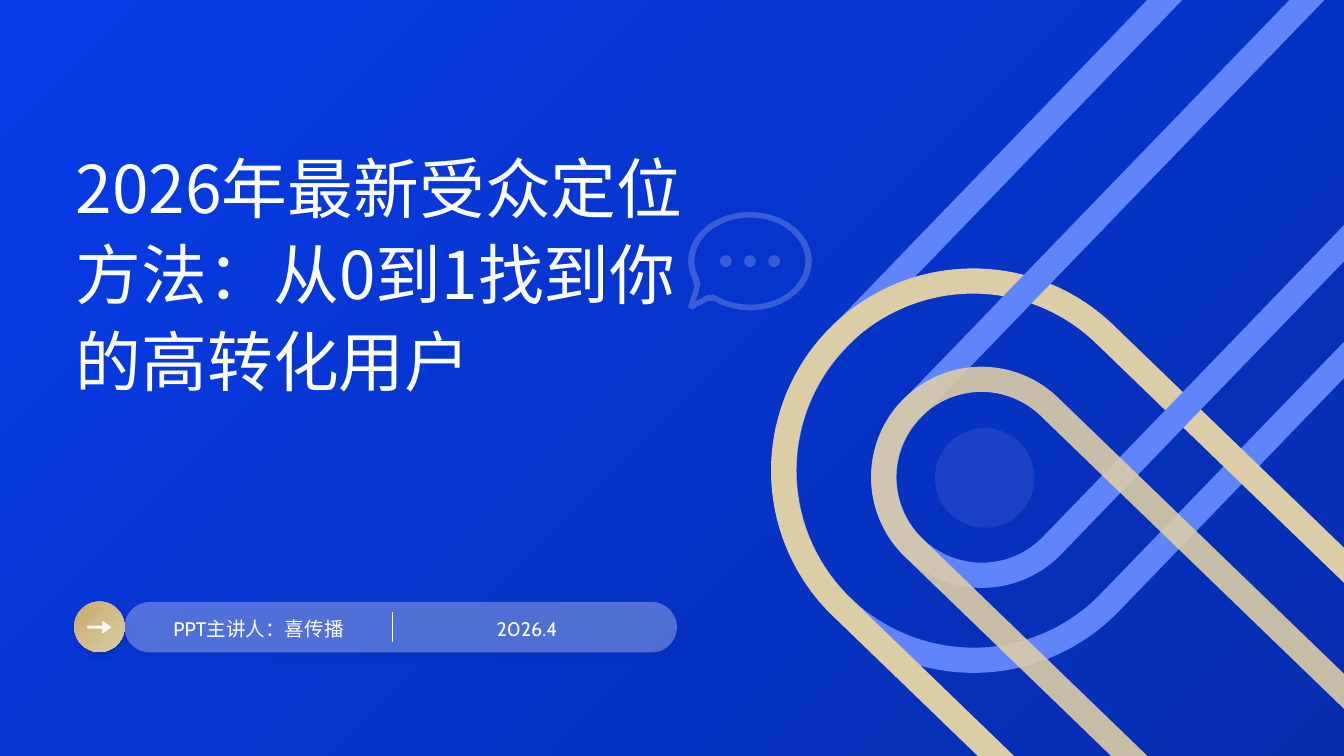
"""Build the cover slide about audience targeting."""
from dataclasses import dataclass
from math import cos, radians, sin
from typing import Optional

from lxml import etree
from pptx import Presentation
from pptx.dml.color import RGBColor as RGB
from pptx.enum.shapes import MSO_CONNECTOR as CONN, MSO_SHAPE as SHAPE
from pptx.enum.text import MSO_ANCHOR as ANCHOR, PP_ALIGN as ALIGN
from pptx.oxml.ns import qn
from pptx.util import Cm, Pt

COLORS = {
    "bg_start": "063CE8", "bg_end": "052DAE", "blue": "6085FB",
    "gold": "DDCDA6", "dark_gold": "C6AB6A", "pale": "CAD6FE",
    "shadow": "031E74", "white": "FFFFFF",
}
CJK_FONT = "Noto Sans CJK SC"
WIDTH, HEIGHT = 33.87, 19.05
Box = tuple[float, float, float, float]
Points = list[tuple[float, float]]


@dataclass
class Band:
    box: Box
    rotation: int
    color: str
    alpha: int = 100


@dataclass
class Item:
    kind: SHAPE
    box: Box
    colors: tuple[str, ...]
    alpha: int = 100
    adjust: tuple[float, ...] = ()
    shadow: bool = False


@dataclass
class Label:
    text: str
    box: Box
    size: int
    font: str
    align: Optional[ALIGN] = None


BANDS = [
    Band((24.87, -5.56, 9.55, 24.26), 224, "blue"),
    Band((23.45, 5.51, 9.55, 19.84), 314, "gold"),
    Band((26.77, -1.55, 4.93, 17.86), 224, "blue"),
    Band((25.75, 8.08, 4.93, 14.61), 314, "gold", 90),
]
BACKGROUND = Item(SHAPE.RECTANGLE, (0, 0, WIDTH, HEIGHT), ("bg_start", "bg_end"))
ITEMS = [
    Item(SHAPE.OVAL, (23.56, 10.79, 2.51, 2.51), ("pale",), 10),
    Item(SHAPE.OVAL, (1.87, 15.16, 1.27, 1.27), ("dark_gold", "gold"), shadow=True),
    Item(SHAPE.RIGHT_ARROW, (2.2, 15.64, 0.61, 0.33), ("white",),
         adjust=(0.24, 0.7)),
    Item(SHAPE.ROUNDED_RECTANGLE, (3.14, 15.17, 13.92, 1.27), ("white",), 30,
         (0.5,), True),
]
SPEAKER = [
    Label("PPT主讲人：喜传播", (3.89, 15.38, 5.26, 0.86), 14, "Cabin", ALIGN.CENTER),
    Label("2026.4", (10.65, 15.38, 5.26, 0.86), 14, "Cabin", ALIGN.CENTER),
]
TITLE = Label("2026年最新受众定位方法：从0到1找到你的高转化用户",
              (1.91, 3.06, 16.36, 7.47), 47, CJK_FONT)

BUBBLE_CENTER = (18.9, 6.58)
OUTER_TAIL = [(18.03, 7.59), (17.83, 7.59), (17.58, 7.72), (17.45, 7.8),
              (17.35, 7.75), (17.35, 7.67), (17.45, 7.39), (17.5, 7.21)]
INNER_TAIL = [(18.08, 7.47), (17.96, 7.42), (17.81, 7.44), (17.53, 7.59),
              (17.6, 7.39), (17.65, 7.16)]


def rgb(name: str) -> RGB:
    return RGB.from_string(COLORS[name])


def set_alpha(sp, alpha: int) -> None:
    if alpha < 100:
        clr = next(sp._element.spPr.iter(qn("a:srgbClr")))
        etree.SubElement(clr, qn("a:alpha"), val=str(alpha * 1000))


def add_shadow(sp) -> None:
    effects = sp._element.spPr.find(qn("a:effectLst"))
    outer = etree.SubElement(effects, qn("a:outerShdw"), blurRad=str(Pt(4)),
                             dist=str(Pt(3)), dir="5400000", algn="t",
                             rotWithShape="0")
    clr = etree.SubElement(outer, qn("a:srgbClr"), val=COLORS["shadow"])
    etree.SubElement(clr, qn("a:alpha"), val="25000")


def paint(sp, colors: tuple[str, ...], alpha: int = 100) -> None:
    sp.shadow.inherit = False
    sp.line.fill.background()
    if len(colors) > 1:
        sp.fill.gradient()
        sp.fill.gradient_angle = 315
        for stop, name in zip(sp.fill.gradient_stops, colors):
            stop.color.rgb = rgb(name)
    else:
        sp.fill.solid()
        sp.fill.fore_color.rgb = rgb(colors[0])
    set_alpha(sp, alpha)


def add_item(s, item: Item) -> None:
    sp = s.shapes.add_shape(item.kind, *map(Cm, item.box))
    for i, value in enumerate(item.adjust):
        sp.adjustments[i] = value
    paint(sp, item.colors, item.alpha)
    if item.shadow:
        add_shadow(sp)


def add_band(s, band: Band) -> None:
    sp = s.shapes.add_shape(SHAPE.ROUND_2_SAME_RECTANGLE, *map(Cm, band.box))
    sp.adjustments[0] = 0.5
    sp.rotation = band.rotation
    sp.shadow.inherit = False
    sp.fill.background()
    sp.line.color.rgb = rgb(band.color)
    sp.line.width = Pt(18)
    set_alpha(sp, band.alpha)


def add_label(s, label: Label) -> None:
    tf = s.shapes.add_textbox(*map(Cm, label.box)).text_frame
    frame = {"word_wrap": True, "vertical_anchor": ANCHOR.MIDDLE,
             "margin_left": 0, "margin_right": 0,
             "margin_top": 0, "margin_bottom": 0}
    for key, value in frame.items():
        setattr(tf, key, value)
    p = tf.paragraphs[0]
    p.alignment = label.align
    p.line_spacing = 1.1
    r = p.add_run()
    r.text = label.text
    for key, value in {"name": label.font, "size": Pt(label.size)}.items():
        setattr(r.font, key, value)
    r.font.color.rgb = rgb("white")
    etree.SubElement(r._r.get_or_add_rPr(), qn("a:ea"), typeface=CJK_FONT)


def add_divider(s) -> None:
    line = s.shapes.add_connector(CONN.STRAIGHT, *map(Cm, (9.89, 15.42, 9.89, 16.18)))
    line.line.color.rgb = rgb("white")
    line.line.width = Pt(1)
    etree.SubElement(line._element.spPr, qn("a:effectLst"))


def arc(center: tuple[float, float], rx: float, ry: float,
        start: int, sweep: int, steps: int) -> Points:
    cx, cy = center
    angles = [radians(start + sweep * i / steps) for i in range(steps + 1)]
    return [(cx + rx * cos(a), cy + ry * sin(a)) for a in angles]


def add_bubble(s) -> None:
    cx, cy = BUBBLE_CENTER
    contours = [arc(BUBBLE_CENTER, 1.56, 1.24, 158, 321, 32) + OUTER_TAIL,
                arc(BUBBLE_CENTER, 1.4, 1.1, 157, 321, 32) + INNER_TAIL]
    contours += [arc((cx + i * 0.61, cy), 0.15, 0.15, 0, 330, 11) for i in (-1, 0, 1)]
    emu = [[(Cm(x), Cm(y)) for x, y in points] for points in contours]
    builder = s.shapes.build_freeform(*emu[0][0])
    for i, points in enumerate(emu):
        if i:
            builder.move_to(*points[0])
        builder.add_line_segments(points[1:], close=True)
    paint(builder.convert_to_shape(), ("white",), 20)


def main() -> None:
    prs = Presentation()
    prs.slide_width, prs.slide_height = Cm(WIDTH), Cm(HEIGHT)
    s = prs.slides.add_slide(prs.slide_layouts[6])
    add_item(s, BACKGROUND)
    for band in BANDS:
        add_band(s, band)
    for item in ITEMS:
        add_item(s, item)
    for label in SPEAKER:
        add_label(s, label)
    add_divider(s)
    add_bubble(s)
    add_label(s, TITLE)
    prs.save("out.pptx")


if __name__ == "__main__":
    main()
